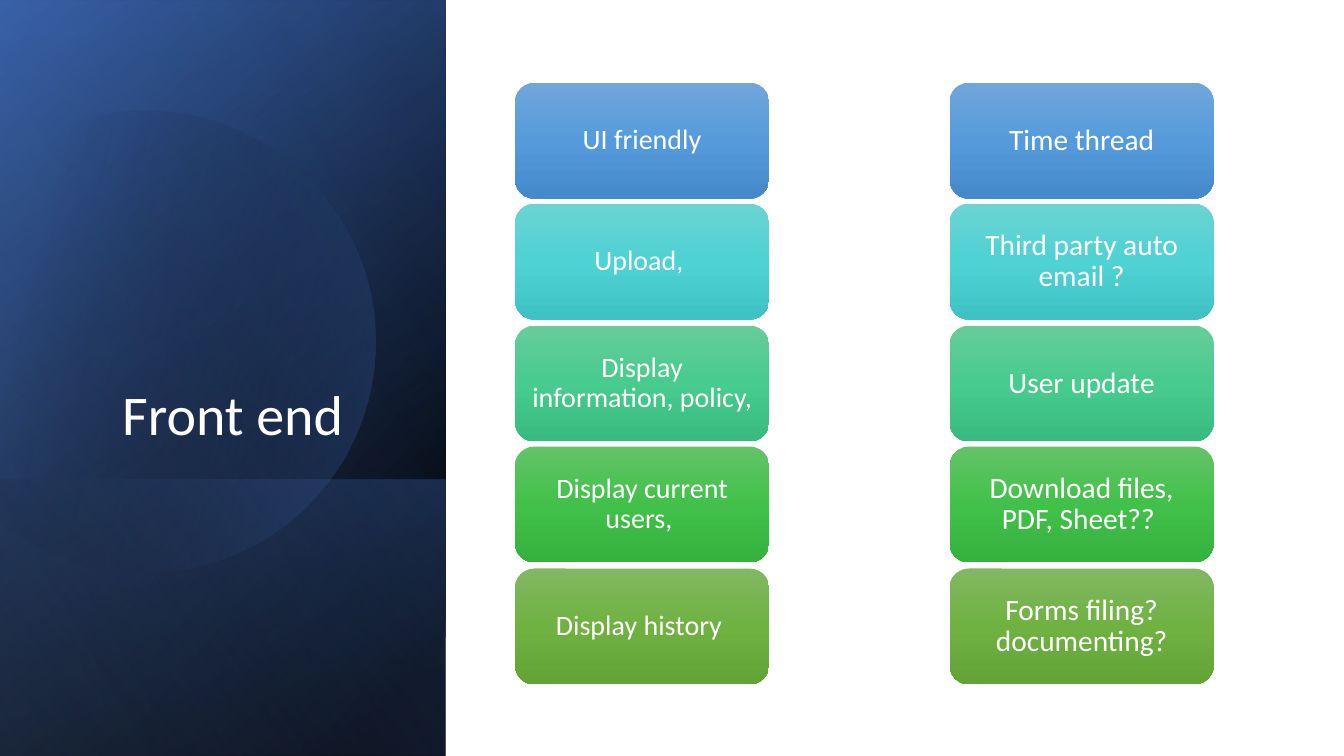
import math
from lxml import etree
from pptx import Presentation
from pptx import util as u
from pptx.dml.color import RGBColor
from pptx.enum import shapes, text
from pptx.oxml.ns import qn

PX = u.Inches(1) // 100
COLORS = {
    "black": "000000", "white": "FFFFFF", "navy": "2F5597",
    "blue": "4472C4", "pale": "8FAADC",
}
CARD_COLORS = {
    "sky": ("71A6DB", "559BDB", "448ACA"),
    "aqua": ("6CD3D3", "4ED2D3", "3EC2C3"),
    "mint": ("67CC9A", "47CB8E", "39BB7F"),
    "green": ("63C368", "42C14A", "34B23D"),
    "olive": ("81B861", "6FB242", "62A336"),
}


def paint(shape, stops, angle):
    """Gradient fill from (position %, hex colour, opacity %) stops, no outline."""
    shape.shadow.inherit = False
    shape.line.fill.background()
    shape.fill.gradient()
    grad = shape._element.spPr.find(qn("a:gradFill"))
    for child in list(grad):
        grad.remove(child)
    grad.set("rotWithShape", "1")
    stop_list = etree.SubElement(grad, qn("a:gsLst"))
    for position, color, opacity in stops:
        stop = etree.SubElement(stop_list, qn("a:gs"), pos=str(position * 1000))
        rgb = etree.SubElement(stop, qn("a:srgbClr"), val=color)
        if opacity < 100:
            etree.SubElement(rgb, qn("a:alpha"), val=str(opacity * 1000))
    etree.SubElement(grad, qn("a:lin"), ang=str(angle * 60000), scaled="0")


def write(shape, words, size, align, anchor, inset_x, inset_y):
    frame = shape.text_frame
    settings = {
        "word_wrap": True, "vertical_anchor": anchor,
        "margin_left": inset_x * PX, "margin_right": inset_x * PX,
        "margin_top": inset_y * PX, "margin_bottom": inset_y * PX,
    }
    for name, value in settings.items():
        setattr(frame, name, value)
    paragraph = frame.paragraphs[0]
    paragraph.alignment = align
    paragraph.line_spacing = 0.9
    run = paragraph.add_run()
    run.text = words
    run.font.name = "Calibri"
    run.font.size = u.Pt(size)
    run.font.color.rgb = RGBColor.from_string(COLORS["white"])


deck = Presentation()
deck.slide_width, deck.slide_height = u.Inches(13.333), u.Inches(7.5)
slide = deck.slides.add_slide(deck.slide_layouts[6])

# Left panel: layered gradients, with the disc below the last layer
black, blue = COLORS["black"], COLORS["blue"]
full_panel = (-154, 154, 750, 442)
layers = [
    (full_panel, [(8, black, 100), (100, COLORS["navy"], 100)], 50),
    ((-154, 155, 750, 442), [(0, black, 0), (99, blue, 46)], 30),
    ((84, 392, 274, 442), [(2, blue, 29), (100, black, 30)], 130),
    None,
    (full_panel, [(0, black, 0), (99, COLORS["pale"], 11)], 120),
]
for layer in layers:
    if layer:
        box, stops, angle = layer
        panel = slide.shapes.add_shape(
            shapes.MSO_SHAPE.RECTANGLE, *(side * PX for side in box))
        panel.rotation = 90
        panel._element.spPr.xfrm.set("flipH", "1")
        paint(panel, stops, angle)
    else:
        # Disc cut off on its left by a chord: corners first, then one arc
        center_x, center_y, radius = 143, 335, 229
        start, end = -118, 150
        rim = [(round((center_x + radius * math.cos(math.radians(a))) * PX),
                round((center_y + radius * math.sin(math.radians(a))) * PX))
               for a in (start, -90, 0, 90, end)]
        outline = slide.shapes.build_freeform(*rim[0])
        outline.add_line_segments(rim[1:], close=True)
        disc = outline.convert_to_shape()
        sides = list(disc._element.iter(qn("a:lnTo")))
        arc = etree.Element(
            qn("a:arcTo"), wR=str(radius * PX), hR=str(radius * PX),
            stAng=str((start + 360) * 60000), swAng=str((end - start) * 60000))
        sides[0].addprevious(arc)
        for side in sides:
            side.getparent().remove(side)
        disc.rotation = 343.9
        paint(disc, [(29, black, 0), (100, blue, 43)], 30)

# Title
title = slide.shapes.add_textbox(38 * PX, 284 * PX, 312 * PX, 165 * PX)
write(title, "Front end", 40, text.PP_ALIGN.RIGHT, text.MSO_ANCHOR.BOTTOM, 10, 5)

# Two columns of feature cards: left, width, text size, inset, labels
columns = [
    (511, 252, 20, 8, ["UI friendly", "Upload, ", "Display information, policy,",
                       "Display current users, ", "Display history "]),
    (942, 262, 21, 9, ["Time thread", "Third party auto email ?", "User update",
                       "Download files, PDF, Sheet?? ",
                       "Forms filing? documenting?"]),
]
for left, width, size, inset, labels in columns:
    for row, (label, shades) in enumerate(zip(labels, CARD_COLORS.values())):
        top = 82 + round(row * 120.4)
        card = slide.shapes.add_shape(
            shapes.MSO_SHAPE.ROUNDED_RECTANGLE,
            left * PX, top * PX, width * PX, 115 * PX)
        paint(card, [(50 * i, shade, 100) for i, shade in enumerate(shades)], 90)
        write(card, label, size, text.PP_ALIGN.CENTER,
              text.MSO_ANCHOR.MIDDLE, inset, 4)

deck.save("out.pptx")
